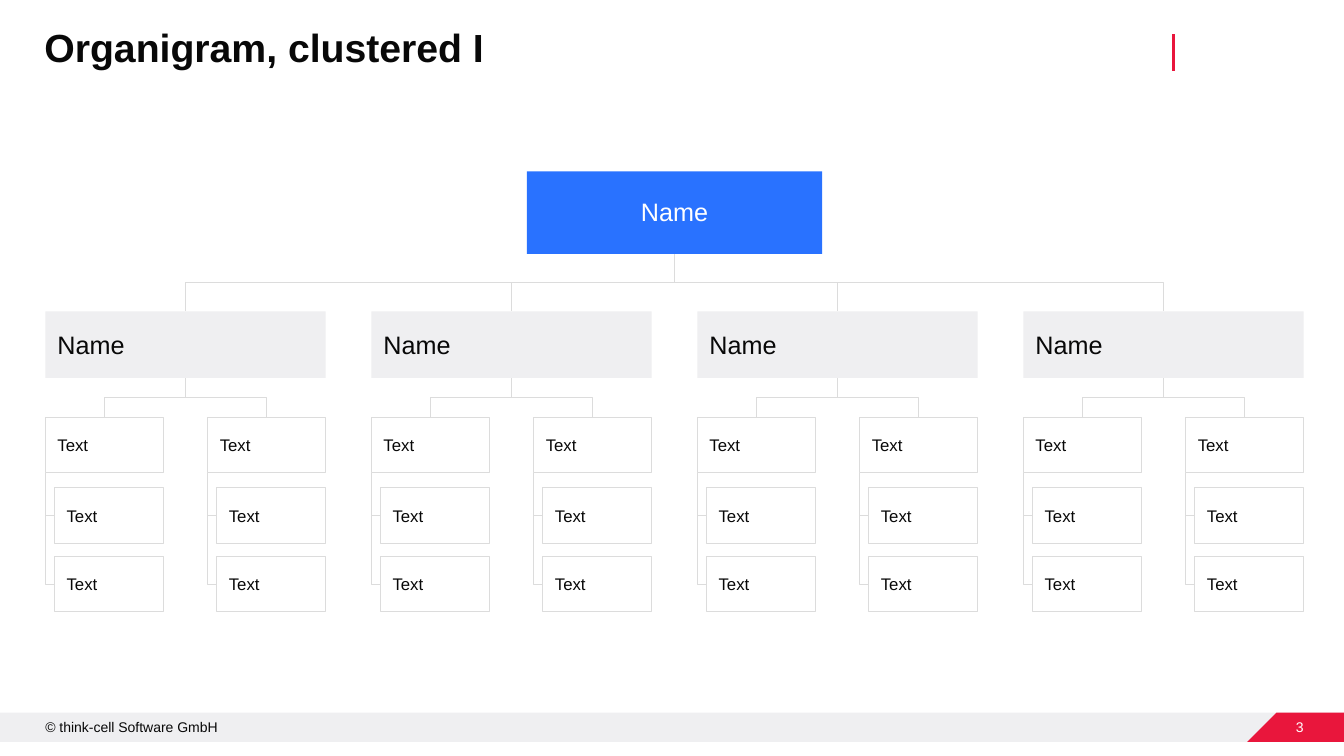
import pptx
import pptx.util
from pptx.dml.color import RGBColor
from pptx.enum.shapes import MSO_CONNECTOR, MSO_SHAPE
from pptx.enum.text import MSO_ANCHOR, PP_ALIGN
from pptx.oxml.ns import qn
from pptx.util import Inches
from lxml import etree

BLACK = RGBColor(0x08, 0x08, 0x08)
WHITE = RGBColor(0xFF, 0xFF, 0xFF)
GREY = RGBColor(0xEF, 0xEF, 0xF1)
LINE = RGBColor(0xDC, 0xDC, 0xDC)
RED = RGBColor(0xE9, 0x16, 0x3C)
BLUE = RGBColor(0x29, 0x72, 0xFF)


def set_text(sp, text, size, color=BLACK, align=PP_ALIGN.LEFT,
             anchor=MSO_ANCHOR.MIDDLE, inset=(0, 0), bold=False, wrap=True):
    tf = sp.text_frame
    tf.text = text
    tf.word_wrap = wrap
    tf.vertical_anchor = anchor
    tf.margin_left = tf.margin_right = Inches(inset[0])
    tf.margin_top = tf.margin_bottom = Inches(inset[1])
    p = tf.paragraphs[0]
    p.alignment = align
    font = p.runs[0].font
    font.name, font.size, font.bold = "Arial", pptx.util.Pt(size), bold
    font.color.rgb = color


def paint(sp, fill, line=None):
    sp.shadow.inherit = False
    sp.fill.solid()
    sp.fill.fore_color.rgb = fill
    if line is None:
        sp.line.fill.background()
    else:
        sp.line.color.rgb = line
        sp.line.width = pptx.util.Pt(0.75)


def add_box(s, x, y, w, h, fill, line=None):
    sp = s.shapes.add_shape(MSO_SHAPE.RECTANGLE, Inches(x), Inches(y), Inches(w), Inches(h))
    paint(sp, fill, line)
    return sp


def add_line(s, kind, x1, y1, x2, y2, color=LINE, width=0.75):
    c = s.shapes.add_connector(kind, Inches(x1), Inches(y1), Inches(x2), Inches(y2))
    c.line.color.rgb = color
    c.line.width = pptx.util.Pt(width)
    etree.SubElement(c._element.spPr, qn("a:effectLst"))
    return c


def add_branch(s, x1, y1, x2, y2):
    """Elbow that leaves a parent downwards and enters a child from above."""
    cx, cy = (x1 + x2) / 2, (y1 + y2) / 2
    side = 1 if x2 > x1 else -1
    dx, dy = side * (y2 - y1) / 2, abs(x2 - x1) / 2
    # The elbow lies on its side, so it is turned about its centre
    c = add_line(s, MSO_CONNECTOR.ELBOW, cx + dx, cy - dy, cx - dx, cy + dy)
    angle = 270 if side > 0 else 90
    c._element.spPr.find(qn("a:xfrm")).set("rot", str(angle * 60000))


def add_hook(s, x, y, w, h):
    """One-bend elbow from a member box leftwards and up to its lead box."""
    c = add_line(s, MSO_CONNECTOR.ELBOW, x, y, x + w, y + h)
    c._element.spPr.find(qn("a:xfrm")).set("rot", str(180 * 60000))
    c._element.spPr.find(qn("a:prstGeom")).set("prst", "bentConnector2")


def add_title(s, x, y, w, h):
    title = s.shapes.title
    title.left, title.top, title.width, title.height = map(Inches, (x, y, w, h))
    set_text(title, "Organigram, clustered I", 28, anchor=MSO_ANCHOR.TOP, bold=True)
    title.text_frame.paragraphs[0].line_spacing = 0.9
    # Accent bar
    add_line(s, MSO_CONNECTOR.STRAIGHT, x + 11.2, 0.34, x + 11.2, 0.7, RED, 2.25)


def add_footer(s, x, y, w, h):
    add_box(s, x, y, w, h, GREY)
    # Slanted corner
    right = x + w
    points = [(right, y), (right, y + h), (right - 0.96, y + h)]
    fb = s.shapes.build_freeform(Inches(right - 0.67), Inches(y))
    fb.add_line_segments([(Inches(px), Inches(py)) for px, py in points])
    paint(fb.convert_to_shape(), RED)
    # Copyright line and page number
    note = s.shapes.add_textbox(Inches(x + 0.45), Inches(y + 0.06), Inches(2.46), Inches(0.17))
    set_text(note, "© think-cell Software GmbH", 10, anchor=MSO_ANCHOR.TOP)
    number = s.shapes.add_textbox(Inches(right - 0.57), Inches(y + 0.06), Inches(0.17), Inches(0.17))
    set_text(number, "3", 10, WHITE, PP_ALIGN.RIGHT, wrap=False)


def add_team(s, x, y, w):
    """Lead box with two indented members below."""
    h, indent = 0.55, 0.09
    lead = add_box(s, x, y, w, h, WHITE, LINE)
    set_text(lead, "Text", 12, inset=(0.12, 0.08))
    for i in range(2):
        top = y + 0.7 + 0.68 * i
        member = add_box(s, x + indent, top, w - indent, h, WHITE, LINE)
        set_text(member, "Text", 12, inset=(0.12, 0.08))
        add_hook(s, x, y + h, indent, top + h / 2 - y - h)


def add_cluster(s, x, y, w):
    """Department head with two teams."""
    h, team_w, gap = 0.66, 1.17, 0.39
    head = add_box(s, x, y, w, h, GREY)
    set_text(head, "Name", 18, inset=(0.12, 0.08))
    for team_x in (x, x + w - team_w):
        add_branch(s, x + w / 2, y + h, team_x + team_w / 2, y + h + gap)
        add_team(s, team_x, y + h + gap, team_w)


def add_organigram(s, x, y, w):
    count, cluster_w, boss_w, boss_h, gap = 4, 2.78, 2.93, 0.82, 0.57
    pitch = (w - cluster_w) / (count - 1)
    middle = x + w / 2
    for i in range(count):
        left = x + pitch * i
        add_branch(s, middle, y + boss_h, left + cluster_w / 2, y + boss_h + gap)
        add_cluster(s, left, y + boss_h + gap, cluster_w)
    boss = add_box(s, middle - boss_w / 2, y, boss_w, boss_h, BLUE)
    set_text(boss, "Name", 18, WHITE, PP_ALIGN.CENTER, inset=(0.24, 0.08))
    boss.text_frame.paragraphs[0].line_spacing = 0.95


def main():
    prs = pptx.Presentation()
    prs.slide_width, prs.slide_height = Inches(13.33), Inches(7.5)
    s = prs.slides.add_slide(prs.slide_layouts[5])  # title only
    add_footer(s, 0, 7.07, 13.33, 0.29)
    add_title(s, 0.44, 0.28, 11.03, 0.42)
    add_organigram(s, 0.45, 1.7, 12.48)
    prs.save("out.pptx")


if __name__ == "__main__":
    main()
